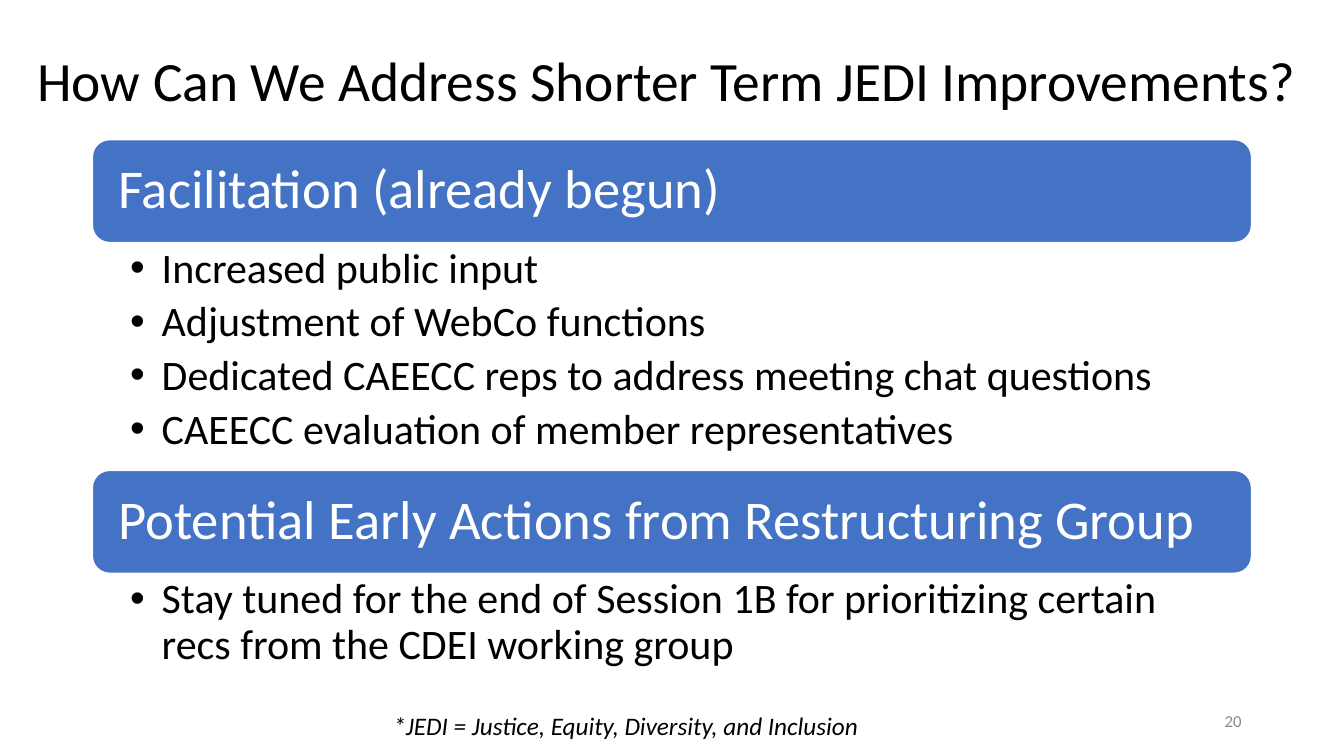
from pptx import Presentation
from pptx.dml.color import RGBColor
from pptx.enum.shapes import MSO_SHAPE
from pptx.enum.text import MSO_ANCHOR, MSO_AUTO_SIZE, PP_ALIGN
from pptx.oxml.ns import qn
from pptx.util import Emu, Pt
from lxml.etree import SubElement

EMU_PER_PX = 9525
BLACK = RGBColor(0x00, 0x00, 0x00)
WHITE = RGBColor(0xFF, 0xFF, 0xFF)
BLUE = RGBColor(0x44, 0x72, 0xC4)
GREY = RGBColor(0x8C, 0x8C, 0x8C)

LEFT, WIDTH = 88, 1104
BAR_HEIGHT = 98
BULLET_INDENT = 30

# heading, bar top, list height, list right margin, list items
SECTIONS = [
    ("Facilitation (already begun)", 133, 216, 22, [
        "Increased public input",
        "Adjustment of WebCo functions",
        "Dedicated CAEECC reps to address meeting chat questions",
        "CAEECC evaluation of member representatives",
    ]),
    ("Potential Early Actions from Restructuring Group", 448, 100, 29, [
        "Stay tuned for the end of Session 1B for prioritizing certain "
        "recs from the CDEI working group",
    ]),
]


def px(length):
    return Emu(length * EMU_PER_PX)


def set_attributes(target, values):
    for name, value in values.items():
        setattr(target, name, value)


class SlideBuilder:
    font_name = "Calibri"

    def __init__(self, slide):
        self.slide = slide

    def place(self, shape, left, top, width, height):
        set_attributes(shape, {"left": px(left), "top": px(top),
                               "width": px(width), "height": px(height)})

    def fill_text(self, shape, lines, size, color, frame_format=None,
                  paragraph_format=None, italic=False):
        """Fill the shape with one formatted paragraph per line."""
        frame = shape.text_frame
        frame.text = "\n".join(lines)
        set_attributes(frame, {"word_wrap": True, "auto_size": MSO_AUTO_SIZE.NONE,
                               **(frame_format or {})})
        for paragraph in frame.paragraphs:
            set_attributes(paragraph, paragraph_format or {})
            font = paragraph.runs[0].font
            set_attributes(font, {"name": self.font_name, "size": Pt(size),
                                  "italic": italic})
            font.color.rgb = color

    def title(self, text, box):
        shape = self.slide.shapes.title
        self.place(shape, *box)
        self.fill_text(shape, [text], 39.6, BLACK,
                       {"vertical_anchor": MSO_ANCHOR.MIDDLE},
                       {"alignment": PP_ALIGN.LEFT, "line_spacing": 0.9})

    def bar(self, text, top):
        shape = self.slide.shapes.add_shape(
            MSO_SHAPE.ROUNDED_RECTANGLE, px(LEFT), px(top), px(WIDTH), px(BAR_HEIGHT))
        shape.shadow.inherit = False
        shape.fill.solid()
        shape.fill.fore_color.rgb = BLUE
        shape.line.color.rgb = WHITE
        shape.line.width = Pt(1)
        self.fill_text(shape, [text], 39, WHITE,
                       {"vertical_anchor": MSO_ANCHOR.MIDDLE,
                        "margin_left": px(20), "margin_right": px(20)},
                       {"alignment": PP_ALIGN.LEFT, "line_spacing": 0.9})

    def bullets(self, placeholder, items, top, height, margin_right):
        self.place(placeholder, LEFT, top, WIDTH, height)
        self.fill_text(placeholder, items, 30, BLACK,
                       {"vertical_anchor": MSO_ANCHOR.TOP,
                        "margin_left": px(36), "margin_right": px(margin_right),
                        "margin_top": px(4), "margin_bottom": px(4)},
                       {"level": 1, "line_spacing": 0.9,
                        "space_before": Pt(0), "space_after": Pt(6)})
        for paragraph in placeholder.text_frame.paragraphs:
            properties = paragraph._p.get_or_add_pPr()
            properties.set("marL", str(px(BULLET_INDENT)))
            properties.set("indent", str(-px(BULLET_INDENT)))
            SubElement(properties, qn("a:buChar")).set("char", "•")

    def label(self, text, box, size, color, alignment, anchor, italic=False):
        shape = self.slide.shapes.add_textbox(*map(px, box))
        self.fill_text(shape, [text], size, color, {"vertical_anchor": anchor},
                       {"alignment": alignment}, italic)


def main():
    presentation = Presentation()
    presentation.slide_width = px(1280)
    presentation.slide_height = px(720)
    layout = presentation.slide_layouts.get_by_name("Two Content")
    slide = presentation.slides.add_slide(layout)
    builder = SlideBuilder(slide)

    builder.title("How Can We Address Shorter Term JEDI Improvements?",
                  (26, 38, 1228, 83))
    for index, (heading, top, height, margin_right, items) in enumerate(SECTIONS, 1):
        builder.bar(heading, top)
        builder.bullets(slide.placeholders[index], items,
                        top + BAR_HEIGHT, height, margin_right)
    builder.label("20", (904, 667, 288, 38), 12, GREY,
                  PP_ALIGN.RIGHT, MSO_ANCHOR.MIDDLE)
    builder.label("*JEDI = Justice, Equity, Diversity, and Inclusion",
                  (36, 672, 1120, 38), 18, BLACK,
                  PP_ALIGN.CENTER, MSO_ANCHOR.TOP, italic=True)
    presentation.save("out.pptx")


if __name__ == "__main__":
    main()
